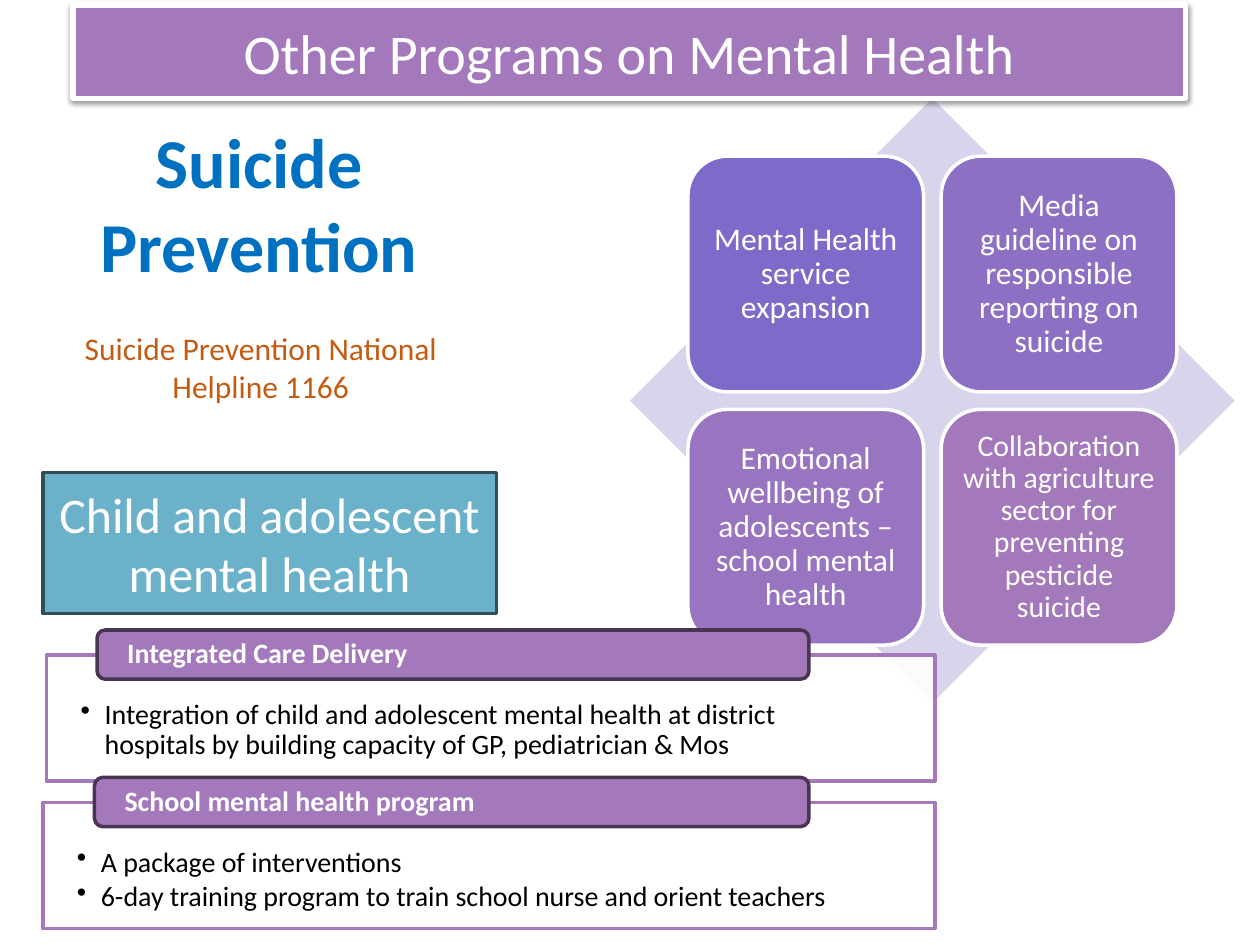
"""Build a slide on suicide prevention and child and adolescent mental health programs."""
from lxml.etree import SubElement
from pptx import Presentation
from pptx.dml.color import RGBColor
from pptx.enum.shapes import MSO_SHAPE
from pptx.enum.text import MSO_ANCHOR, MSO_AUTO_SIZE, PP_ALIGN
from pptx.oxml.ns import qn
from pptx.util import Inches, Pt

COLORS = {
    "white": "FFFFFF", "black": "000000", "blue": "0070C0", "orange": "C55A11",
    "purple": "A379BB", "plum": "473552", "teal": "6BB1C9", "navy": "2F4E58",
    "lavender": "D8D4EB", "tile 1": "7E6BC9", "tile 2": "8D70C4", "tile 3": "9974C0",
}
TITLE = "Suicide Prevention"
HELPLINE = "Suicide Prevention National Helpline 1166"
BANNER = "Other Programs on Mental Health"
CHILD_HEALTH = "Child and adolescent mental health"
TILES = [
    ("Mental Health service expansion", "tile 1", 18),
    ("Media guideline on responsible reporting on suicide", "tile 2", 18),
    ("Emotional wellbeing of adolescents – school mental health", "tile 3", 18),
    ("Collaboration with agriculture sector for preventing pesticide suicide", "purple", 17),
]
TILE_LEFT, TILE_TOP, TILE_SIZE, TILE_STEP = 5.46, 1.24, 1.87, 2.01
PANELS = [
    ("Integrated Care Delivery", 0.37, 0.77,
     ["Integration of child and adolescent mental health at district hospitals "
      "by building capacity of GP, pediatrician & Mos"]),
    ("School mental health program", 0.34, 0.75,
     ["A package of interventions",
      "6-day training program to train school nurse and orient teachers"]),
]
PANEL_TOP, PANEL_STEP, PANEL_RIGHT, HEADER_RIGHT = 5.2, 1.17, 7.42, 6.42
BULLET_INDENT = 0.19


def rgb(name):
    return RGBColor.from_string(COLORS[name])


def place(shape, box):
    for side, value in zip(("left", "top", "width", "height"), box):
        setattr(shape, side, Inches(value))


def write(shape, lines, size, color, bold=False, align=PP_ALIGN.CENTER, spacing=None,
          anchor=MSO_ANCHOR.MIDDLE, insets=(0.1, 0.05, 0.1, 0.05), after=None):
    frame = shape.text_frame
    settings = {"word_wrap": True, "auto_size": MSO_AUTO_SIZE.NONE, "vertical_anchor": anchor}
    for side, value in zip(("left", "top", "right", "bottom"), insets):
        settings["margin_" + side] = Inches(value)
    for name, value in settings.items():
        setattr(frame, name, value)
    for index, line in enumerate(lines):
        paragraph = frame.add_paragraph() if index else frame.paragraphs[0]
        for name, value in {"alignment": align, "line_spacing": spacing, "space_after": after}.items():
            setattr(paragraph, name, value)
        run = paragraph.add_run()
        run.text = line
        for name, value in {"name": "Calibri", "size": Pt(size), "bold": bold}.items():
            setattr(run.font, name, value)
        run.font.color.rgb = rgb(color)


def add_box(slide, kind, box, fill, line=None, width=2):
    shape = slide.shapes.add_shape(kind, *map(Inches, box))
    shape.shadow.inherit = False
    shape.fill.solid()
    shape.fill.fore_color.rgb = rgb(fill)
    if line:
        shape.line.color.rgb = rgb(line)
        shape.line.width = Pt(width)
    else:
        shape.line.fill.background()
    return shape


def add_shadow(shape):
    effects = shape._element.spPr.find(qn("a:effectLst"))
    shadow = SubElement(effects, qn("a:outerShdw"), blurRad=str(Pt(3.1)), dist=str(Pt(1.6)),
                        dir="5400000", rotWithShape="0")
    color = SubElement(shadow, qn("a:srgbClr"), val=COLORS["black"])
    SubElement(color, qn("a:alpha"), val="38000")


def add_bullets(shape):
    for paragraph in shape.text_frame.paragraphs:
        properties = paragraph._p.get_or_add_pPr()
        properties.set("marL", str(Inches(BULLET_INDENT)))
        properties.set("indent", str(-Inches(BULLET_INDENT)))
        SubElement(properties, qn("a:buChar"), char="•")


def add_tiles(slide):
    add_box(slide, MSO_SHAPE.DIAMOND, (5, 0.78, 4.8, 4.8), "lavender")
    for index, (text, fill, size) in enumerate(TILES):
        row, column = divmod(index, 2)
        box = (TILE_LEFT + column * TILE_STEP, TILE_TOP + row * TILE_STEP, TILE_SIZE, TILE_SIZE)
        tile = add_box(slide, MSO_SHAPE.ROUNDED_RECTANGLE, box, fill, "white")
        write(tile, [text], size, "white", spacing=0.9, insets=(0.07,) * 4)


def add_panels(slide):
    for index, (heading, left, header_left, bullets) in enumerate(PANELS):
        top = PANEL_TOP + index * PANEL_STEP
        panel = add_box(slide, MSO_SHAPE.RECTANGLE, (left, top, PANEL_RIGHT - left, 1),
                        "white", "purple")
        fill_color = panel._element.spPr.find(qn("a:solidFill"))[0]
        SubElement(fill_color, qn("a:alpha"), val="90000")
        write(panel, bullets, 16, "black", align=PP_ALIGN.LEFT, spacing=0.9,
              anchor=MSO_ANCHOR.TOP, insets=(0.27, 0.36, 0.53, 0.12), after=Pt(2.4))
        add_bullets(panel)
        header = add_box(slide, MSO_SHAPE.ROUNDED_RECTANGLE,
                         (header_left, top - 0.2, HEADER_RIGHT - header_left, 0.39),
                         "purple", "plum")
        write(header, [heading], 16, "white", bold=True, align=PP_ALIGN.LEFT, spacing=0.9,
              insets=(0.22, 0, 0.22, 0))


def main():
    presentation = Presentation()
    presentation.slide_width, presentation.slide_height = Inches(10), Inches(7.5)
    slide = presentation.slides.add_slide(presentation.slide_layouts[5])
    title = slide.shapes.title
    place(title, (0.53, 1.05, 3.05, 1.12))
    write(title, [TITLE], 40, "blue", bold=True)
    add_tiles(slide)
    helpline = slide.shapes.add_textbox(*map(Inches, (0.33, 2.56, 3.48, 0.71)))
    write(helpline, [HELPLINE], 18, "orange", anchor=MSO_ANCHOR.TOP)
    banner = add_box(slide, MSO_SHAPE.RECTANGLE, (0.58, 0.04, 8.83, 0.74), "purple", "white", 3)
    add_shadow(banner)
    write(banner, [BANNER], 32, "white")
    child_health = add_box(slide, MSO_SHAPE.RECTANGLE, (0.34, 3.75, 3.6, 1.12), "teal", "navy")
    write(child_health, [CHILD_HEALTH], 28.5, "white")
    add_panels(slide)
    presentation.save("out.pptx")


if __name__ == "__main__":
    main()
